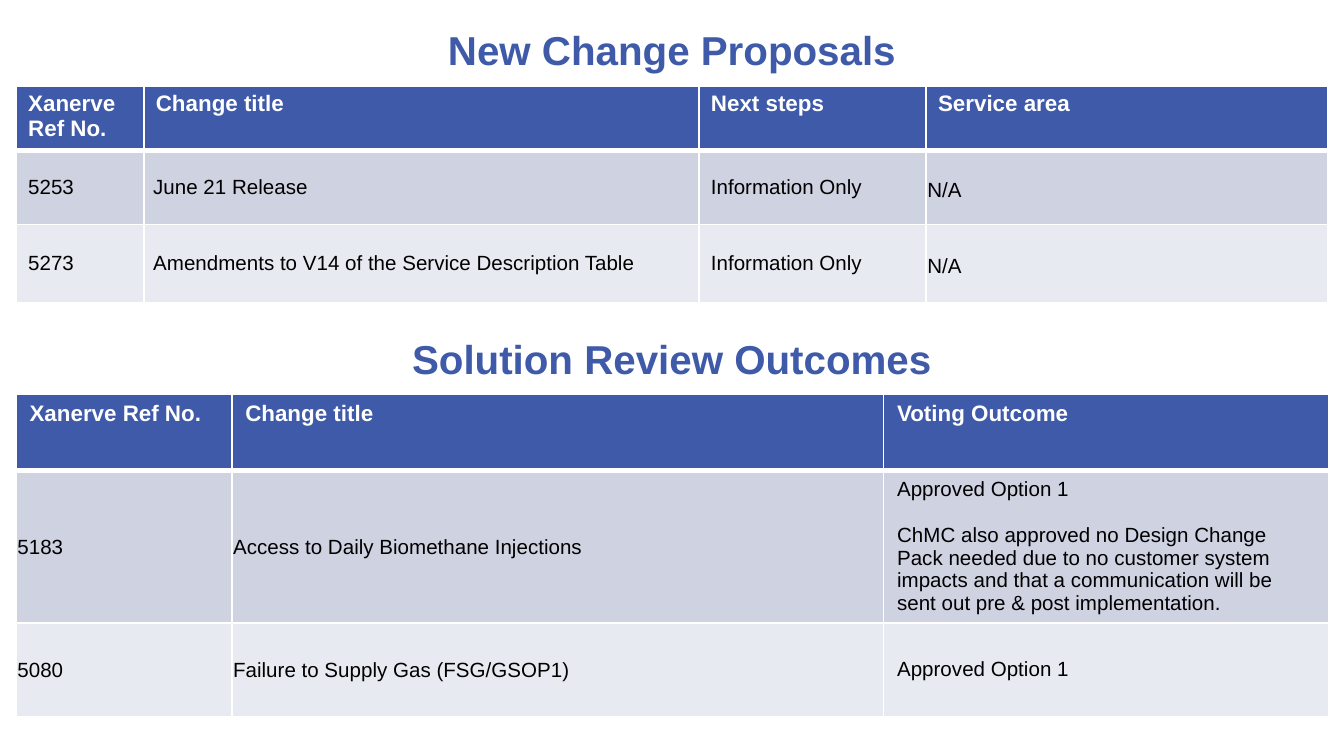
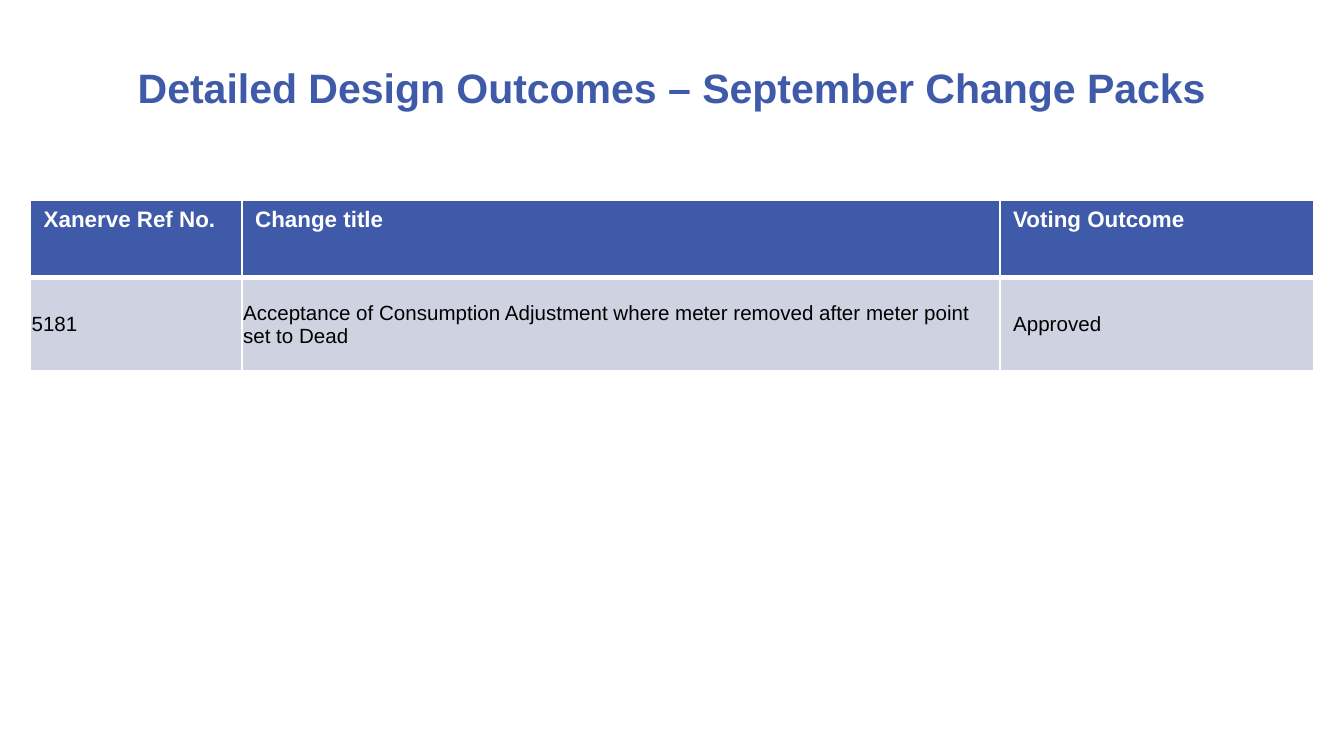
from lxml.etree import SubElement
from pptx import Presentation
from pptx.dml.color import RGBColor as Rgb
from pptx.enum.text import MSO_ANCHOR as Anchor, PP_ALIGN as Align
from pptx.oxml.ns import qn
from pptx.util import Inches, Pt

WIDE = Inches(10)
HIGH = WIDE * 9 // 16
FONT = "Arial"
HUES = {"blue": "3E5AA8", "white": "FFFFFF", "black": "000000",
        "band": "CED2E1", "pale": "E8EAF1"}
PADS = {"full": (0.1, 0.05, 0.1, 0.05), "mid": (0.09, 0.04, 0.09, 0.04),
        "tall": (0.1, 0.02, 0.1, 0.02), "thin": (0.07, 0, 0.07, 0),
        "snug": (0.01, 0.01, 0.01, 0)}
REF = "Xanerve Ref No."
VOTES = (REF, "Change title", "Voting Outcome")


def across(share):
    """Turn a percentage of the slide's width into a length."""
    return round(WIDE * share / 100)


def down(share):
    """Turn a percentage of the slide's height into a length."""
    return round(HIGH * share / 100)


def style(frame, size, hue, bold):
    """Set the font of every run in a text frame."""
    for para in frame.paragraphs:
        for run in para.runs:
            font = run.font
            font.name, font.size, font.bold = FONT, Pt(size), bold
            font.color.rgb = Rgb.from_string(HUES[hue])


def add_title(slide, text, left, top, height, size):
    """Add a centred heading with equal side margins."""
    box = slide.shapes.add_textbox(across(left), down(top),
                                   across(100 - 2 * left), down(height))
    frame = box.text_frame
    frame.word_wrap = True
    frame.vertical_anchor = Anchor.MIDDLE
    frame.text = text
    frame.paragraphs[0].alignment = Align.CENTER
    style(frame, size, "blue", True)


def edge(cell, row):
    """Draw white cell borders, thick where header and body meet."""
    props = cell._tc.get_or_add_tcPr()
    widths = {"L": 1, "R": 1, "T": 3 if row == 1 else 1, "B": 1 if row else 3}
    for spot, (side, width) in enumerate(widths.items()):
        line = SubElement(props, qn(f"a:ln{side}"), w=str(Pt(width)))
        fill = SubElement(line, qn("a:solidFill"))
        SubElement(fill, qn("a:srgbClr"), val=HUES["white"])
        props.insert(spot, line)


def fill_cell(cell, text, row, pad):
    """Write and format one header or body cell."""
    hue = ("pale" if row % 2 == 0 else "band") if row else "blue"
    cell.fill.solid()
    cell.fill.fore_color.rgb = Rgb.from_string(HUES[hue])
    sides = [Inches(size) for size in PADS[pad]]
    cell.margin_left, cell.margin_top, cell.margin_right, cell.margin_bottom = sides
    cell.vertical_anchor = Anchor.MIDDLE if row else Anchor.TOP
    frame = cell.text_frame
    frame.text = text
    for para in frame.paragraphs[1:]:
        para.space_before = Pt(12)
    if text == "N/A":
        frame.paragraphs[0].line_spacing = 1.15
    style(frame, 11 if row else 12, "black" if row else "white", not row)
    edge(cell, row)


def add_grid(slide, left, top, cols, rows, data, head, pads):
    """Add a table with a header pad and one body pad per column."""
    shape = slide.shapes.add_table(len(rows), len(cols), across(left), down(top),
                                   across(sum(cols)), down(sum(rows)))
    table = shape.table
    table.horz_banding = False
    for col, share in zip(table.columns, cols):
        col.width = across(share)
    for row, share in zip(table.rows, rows):
        row.height = down(share)
    for r, line in enumerate(data):
        for c, text in enumerate(line):
            fill_cell(table.cell(r, c), text, r, pads[c] if r else head)


def main():
    """Build and save both slides."""
    deck = Presentation()
    deck.slide_width, deck.slide_height = WIDE, HIGH
    first, second = (deck.slides.add_slide(deck.slide_layouts[6]) for _ in range(2))
    vote_pads = ("snug", "snug", "tall")

    add_title(first, "New Change Proposals", 5, 3.02, 6.94, 21.6)
    add_grid(first, 1.2, 11.39, (9.5, 41.3, 16.9, 29.9), (8.36, 9.79, 10.32), (
        (REF, "Change title", "Next steps", "Service area"),
        ("5253", "June 21 Release", "Information Only", "N/A"),
        ("5273", "Amendments to V14 of the Service Description Table",
         "Information Only", "N/A"),
    ), "mid", ("mid", "thin", "mid", "snug"))

    add_title(first, "Solution Review Outcomes", 5, 43.95, 6.94, 21.6)
    add_grid(first, 1.2, 52.14, (16.05, 48.5, 33.1), (10.14, 20.1, 12.46), (
        VOTES,
        ("5183", "Access to Daily Biomethane Injections",
         "Approved Option 1\nChMC also approved no Design Change Pack needed "
         "due to no customer system impacts and that a communication will be "
         "sent out pre & post implementation."),
        ("5080", "Failure to Supply Gas (FSG/GSOP1)", "Approved Option 1"),
    ), "full", vote_pads)

    add_title(second, "Detailed Design Outcomes – September Change Packs",
              1.2, 6.58, 9.79, 22)
    add_grid(second, 2.25, 26.51, (15.74, 56.4, 23.35), (10.14, 12.46), (
        VOTES,
        ("5181", "Acceptance of Consumption Adjustment where meter removed "
         "after meter point set to Dead", "Approved"),
    ), "full", vote_pads)
    deck.save("out.pptx")


if __name__ == "__main__":
    main()
